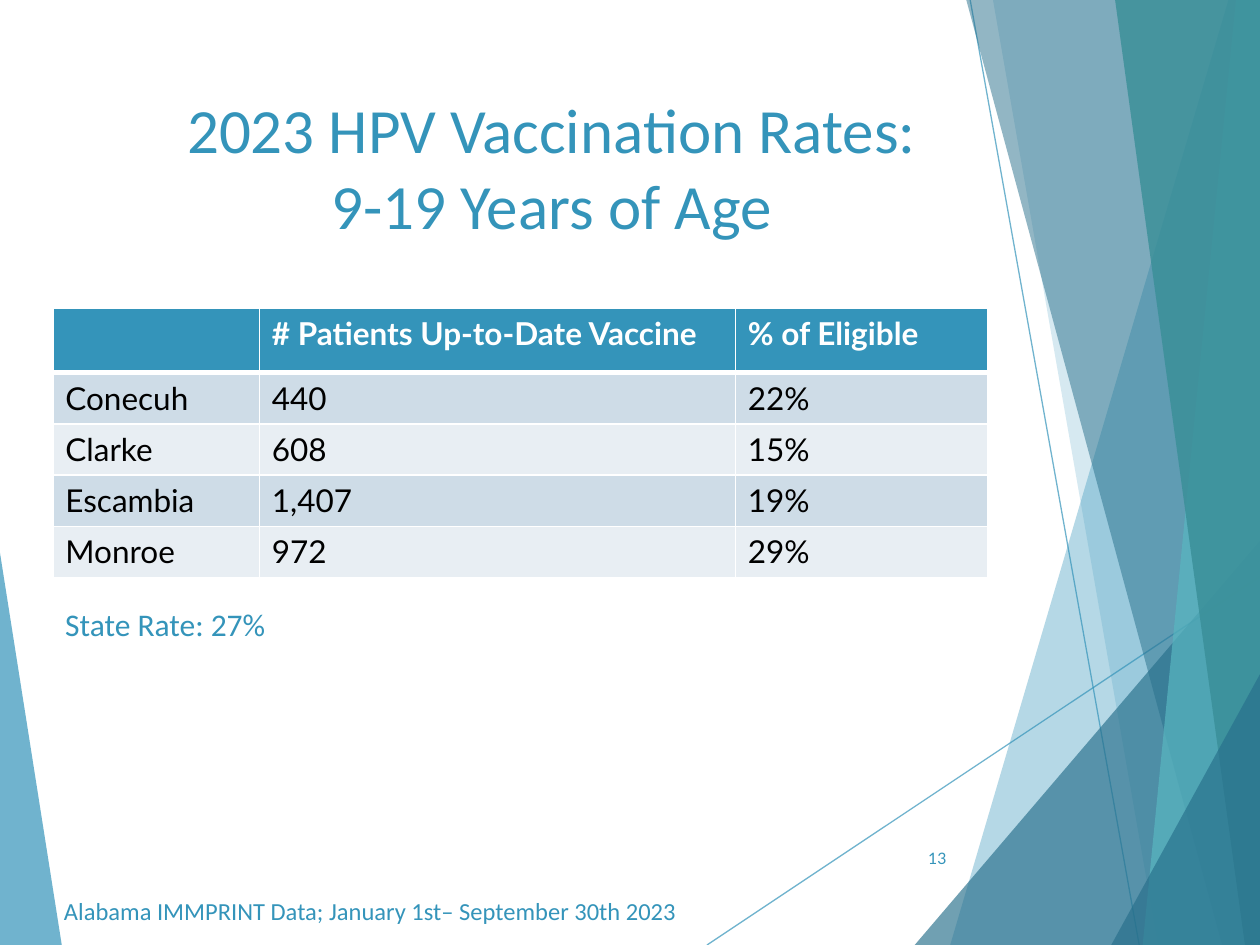
import dataclasses

import lxml.etree
import pptx
import pptx.dml.color
import pptx.enum.shapes
import pptx.enum.text
import pptx.oxml.ns
import pptx.slide
import pptx.table
import pptx.text.text
import pptx.util

Pt = pptx.util.Pt
qn = pptx.oxml.ns.qn
Align = pptx.enum.text.PP_ALIGN
Anchor = pptx.enum.text.MSO_ANCHOR
AutoSize = pptx.enum.text.MSO_AUTO_SIZE

WIDTH, HEIGHT = 720, 540
COLORS = {
    "blue": "3494BA",
    "deep": "276F8B",
    "aqua": "58B6C0",
    "teal": "3A8F98",
    "band_dark": "CEDCE7",
    "band_light": "E8EEF3",
    "white": "FFFFFF",
    "black": "000000",
}


@dataclasses.dataclass
class Shard:
    points: list[tuple[float, float]]
    color: str
    opacity: int


@dataclasses.dataclass
class Ray:
    start: tuple[float, float]
    end: tuple[float, float]


@dataclasses.dataclass
class Label:
    text: str
    frame: tuple[float, float, float, float]
    size: float
    font: str = "Calibri"
    align: Align = Align.LEFT
    anchor: Anchor = Anchor.TOP
    auto_size: AutoSize = AutoSize.SHAPE_TO_FIT_TEXT


def right_band(top: float, bottom: float, color: str, opacity: int) -> Shard:
    return Shard([(top, 0), (bottom, HEIGHT), (WIDTH, HEIGHT), (WIDTH, 0)], color, opacity)


def right_corner(left: float, top: float) -> Shard:
    return Shard([(left, HEIGHT), (WIDTH, top), (WIDTH, HEIGHT)], "deep", 66)


LEFT_SHARD = Shard([(0, 316), (35.3, HEIGHT), (0, HEIGHT)], "blue", 70)
RAYS = [Ray((404, HEIGHT), (WIDTH, 329.4)), Ray((554.4, 0), (651, HEIGHT))]
RIGHT_SHARDS = [
    right_band(702, 543, "blue", 36),
    right_band(567.4, 661.7, "blue", 20),
    right_corner(522.7, 309),
    right_band(552.2, 698.4, "deep", 50),
    right_band(706.3, 653, "aqua", 70),
    right_band(637.2, 711.4, "teal", 82),
    right_corner(635, 385.2),
]

TITLE = "2023 HPV Vaccination Rates:\v9-19 Years of Age"
TITLE_FRAME = (48.2, 48.2, 534.2, 103.7)
TABLE_ORIGIN = (30.2, 176)
COLUMN_WIDTHS = [118, 272, 144]
HEADER_HEIGHT, ROW_HEIGHT = 37, 29.3
ROWS = [
    ("", "# Patients Up-to-Date Vaccine", "% of Eligible"),
    ("Conecuh", "440", "22%"),
    ("Clarke", "608", "15%"),
    ("Escambia", "1,407", "19%"),
    ("Monroe", "972", "29%"),
]
LABELS = [
    Label("13", (507.6, 476, 40.3, 28.8), 9, "Lato", Align.RIGHT, Anchor.MIDDLE, AutoSize.NONE),
    Label("State Rate: 27%", (30.2, 342, 414, 51), 18),
    Label("Alabama IMMPRINT Data; January 1st– September 30th 2023", (29.5, 508.3, 477.4, 24.5), 14),
]


def rgb(name: str) -> pptx.dml.color.RGBColor:
    return pptx.dml.color.RGBColor.from_string(COLORS[name])


def set_opacity(properties: lxml.etree._Element, percent: int) -> None:
    color = properties.find(".//" + qn("a:srgbClr"))
    lxml.etree.SubElement(color, qn("a:alpha")).set("val", str(percent * 1000))


def draw_shard(page: pptx.slide.Slide, shard: Shard) -> None:
    first, *rest = [(Pt(x), Pt(y)) for x, y in shard.points]
    builder = page.shapes.build_freeform(*first)
    builder.add_line_segments(rest, close=True)
    shape = builder.convert_to_shape()
    shape.shadow.inherit = False
    shape.line.fill.background()
    shape.fill.solid()
    shape.fill.fore_color.rgb = rgb(shard.color)
    set_opacity(shape._element.spPr, shard.opacity)


def draw_ray(page: pptx.slide.Slide, ray: Ray) -> None:
    ends = [Pt(value) for value in ray.start + ray.end]
    line = page.shapes.add_connector(pptx.enum.shapes.MSO_CONNECTOR.STRAIGHT, *ends)
    line.line.width = Pt(0.75)
    line.line.color.rgb = rgb("blue")
    properties = line._element.spPr
    set_opacity(properties, 70)
    lxml.etree.SubElement(properties, qn("a:effectLst"))


def style_para(para: pptx.text.text._Paragraph, size: float, font: str,
               color: str, bold: bool = False) -> None:
    for run in para.runs:
        run.font.size = Pt(size)
        run.font.name = font
        run.font.bold = bold
        run.font.color.rgb = rgb(color)


def draw_title(page: pptx.slide.Slide) -> None:
    title = page.shapes.title
    page.shapes._spTree.append(title._element)
    title.left, title.top, title.width, title.height = map(Pt, TITLE_FRAME)
    title.text_frame.text = TITLE
    title.text_frame.vertical_anchor = Anchor.TOP
    title.text_frame.auto_size = AutoSize.NONE
    para = title.text_frame.paragraphs[0]
    para.alignment = Align.CENTER
    style_para(para, 36, "Calibri", "blue")


def draw_label(page: pptx.slide.Slide, label: Label) -> None:
    frame = page.shapes.add_textbox(*map(Pt, label.frame)).text_frame
    frame.text = label.text
    frame.word_wrap = True
    frame.auto_size = label.auto_size
    frame.vertical_anchor = label.anchor
    para = frame.paragraphs[0]
    para.alignment = label.align
    style_para(para, label.size, label.font, "blue")


def set_borders(cell: pptx.table._Cell, widths: dict[str, float]) -> None:
    properties = cell._tc.get_or_add_tcPr()
    for side, width in widths.items():
        border = lxml.etree.SubElement(properties, qn("a:ln" + side), w=str(Pt(width)))
        fill = lxml.etree.SubElement(border, qn("a:solidFill"))
        lxml.etree.SubElement(fill, qn("a:srgbClr"), val=COLORS["white"])


def draw_table(page: pptx.slide.Slide) -> None:
    heights = [HEADER_HEIGHT] + [ROW_HEIGHT] * (len(ROWS) - 1)
    frame = (*TABLE_ORIGIN, sum(COLUMN_WIDTHS), sum(heights))
    table = page.shapes.add_table(len(ROWS), len(COLUMN_WIDTHS), *map(Pt, frame)).table
    for column, width in zip(table.columns, COLUMN_WIDTHS):
        column.width = Pt(width)
    for index, (row, height, texts) in enumerate(zip(table.rows, heights, ROWS)):
        row.height = Pt(height)
        header = index == 0
        fill = "blue" if header else "band_dark" if index % 2 else "band_light"
        for cell, text in zip(row.cells, texts):
            set_borders(cell, {"L": 1, "R": 1, "T": 3 if index == 1 else 1, "B": 3 if header else 1})
            cell.fill.solid()
            cell.fill.fore_color.rgb = rgb(fill)
            cell.text_frame.text = text
            style_para(cell.text_frame.paragraphs[0], 18, "Lato",
                       "white" if header else "black", header)


def main() -> None:
    deck = pptx.Presentation()
    deck.slide_width, deck.slide_height = Pt(WIDTH), Pt(HEIGHT)
    page = deck.slides.add_slide(deck.slide_layouts.get_by_name("Title Only"))
    draw_shard(page, LEFT_SHARD)
    for ray in RAYS:
        draw_ray(page, ray)
    for shard in RIGHT_SHARDS:
        draw_shard(page, shard)
    draw_title(page)
    draw_table(page)
    for label in LABELS:
        draw_label(page, label)
    deck.save("out.pptx")


if __name__ == "__main__":
    main()
